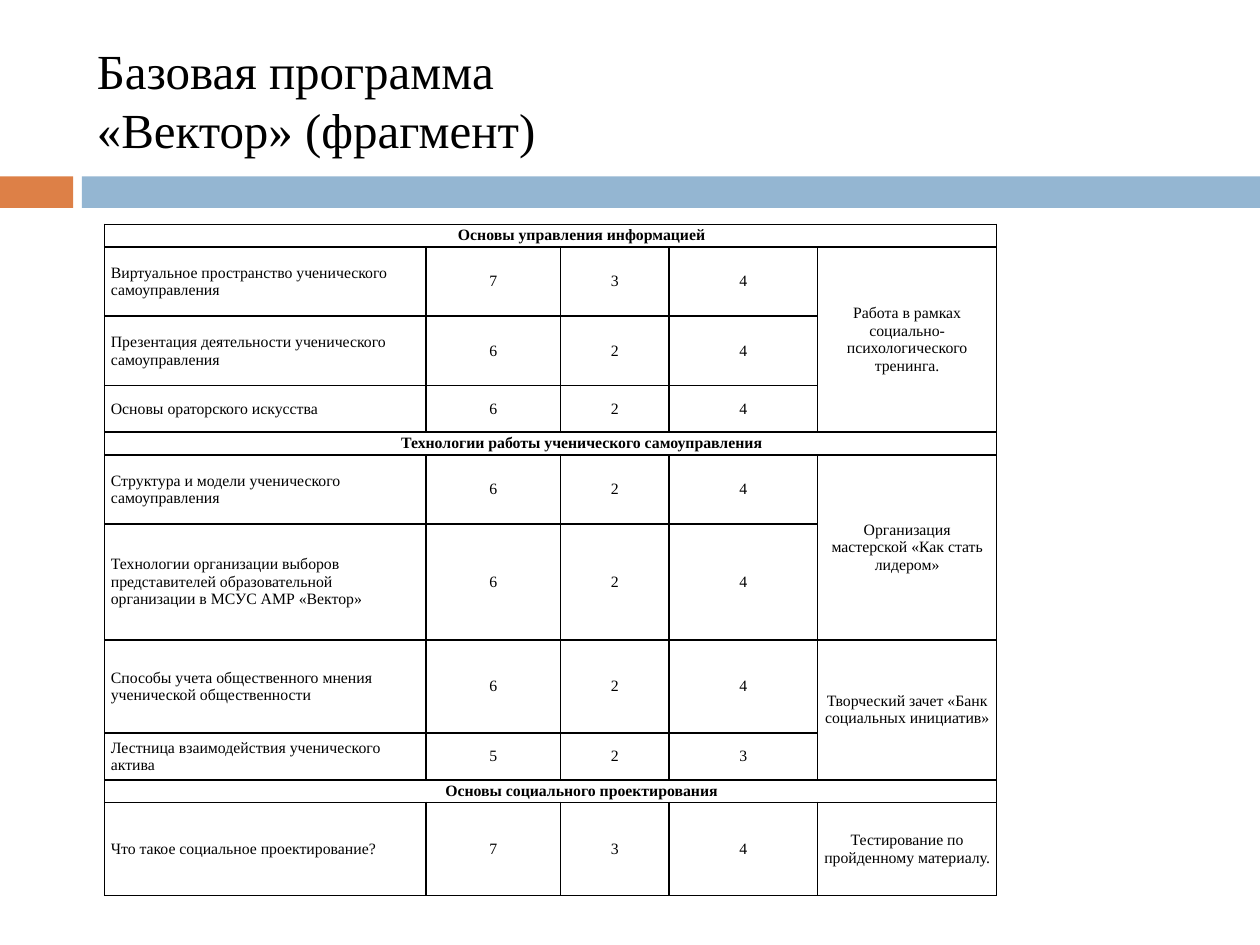
"""Build the slide with a fragment of the «Вектор» base programme."""
import pptx
import pptx.dml.color
import pptx.enum.shapes
import pptx.enum.text
import pptx.oxml
import pptx.oxml.ns
import pptx.util

Inches = pptx.util.Inches
RGB = pptx.dml.color.RGBColor.from_string
ALIGN = pptx.enum.text.PP_ALIGN
COLORS = {"text": "000000", "orange": "DD8047", "blue": "94B6D2", "cell": "FFFFFF"}


def write(frame, text, size=9, bold=False, align=ALIGN.LEFT, indent=0):
    frame.word_wrap = True
    paragraph = frame.paragraphs[0]
    paragraph.alignment = align
    if indent:
        paragraph._p.get_or_add_pPr().set("indent", str(Inches(indent)))
    for number, line in enumerate(text.split("\n")):
        if number:
            paragraph.add_line_break()
        run = paragraph.add_run()
        run.text = line
        run.font.name = "Times New Roman"
        run.font.size = pptx.util.Pt(size)
        run.font.bold = bold
        run.font.color.rgb = RGB(COLORS["text"])


def format_cell(cell):
    cell.margin_left = cell.margin_right = Inches(0.05)
    cell.margin_top = cell.margin_bottom = 0
    cell.vertical_anchor = pptx.enum.text.MSO_ANCHOR.MIDDLE
    properties = cell._tc.get_or_add_tcPr()
    for side in ("lnL", "lnR", "lnT", "lnB"):
        properties.append(pptx.oxml.parse_xml(
            f'<a:{side} {pptx.oxml.ns.nsdecls("a")} w="{pptx.util.Pt(1)}"><a:solidFill>'
            f'<a:srgbClr val="{COLORS["text"]}"/></a:solidFill></a:{side}>'))
    cell.fill.solid()
    cell.fill.fore_color.rgb = RGB(COLORS["cell"])


deck = pptx.Presentation()
deck.slide_width, deck.slide_height = Inches(10), Inches(7.5)
slide = deck.slides.add_slide(deck.slide_layouts[6])

for left, width, color in ((0, 0.58, "orange"), (0.65, 9.35, "blue")):
    band = slide.shapes.add_shape(pptx.enum.shapes.MSO_SHAPE.RECTANGLE,
                                  Inches(left), Inches(1.4), Inches(width), Inches(0.25))
    band.shadow.inherit = False
    band.fill.solid()
    band.fill.fore_color.rgb = RGB(COLORS[color])
    band.line.fill.background()

title = slide.shapes.add_textbox(Inches(0.67), Inches(0.25), Inches(8.92), Inches(1.08))
title.text_frame.vertical_anchor = pptx.enum.text.MSO_ANCHOR.MIDDLE
write(title.text_frame, "Базовая программа\n«Вектор» (фрагмент)", size=28)

column_widths = (2.55, 1.07, 0.86, 1.18, 1.42)
programme = [
    (0.18, "Основы управления информацией"),
    (0.55, "Виртуальное пространство ученического самоуправления", "7", "3", "4",
     "Работа в рамках социально-психологического тренинга."),
    (0.55, "Презентация деятельности ученического самоуправления", "6", "2", "4"),
    (0.37, "Основы ораторского искусства", "6", "2", "4"),
    (0.18, "Технологии работы ученического самоуправления"),
    (0.55, "Структура и модели ученического самоуправления", "6", "2", "4",
     "Организация мастерской «Как стать лидером»"),
    (0.92, "Технологии организации выборов представителей образовательной "
     "организации в МСУС АМР «Вектор»", "6", "2", "4"),
    (0.74, "Способы учета общественного мнения ученической общественности", "6", "2", "4",
     "Творческий зачет «Банк социальных инициатив»"),
    (0.37, "Лестница взаимодействия ученического актива", "5", "2", "3"),
    (0.18, "Основы социального проектирования"),
    (0.74, "Что такое социальное проектирование?", "7", "3", "4",
     "Тестирование по пройденному материалу."),
]
last_column = len(column_widths) - 1
table_frame = slide.shapes.add_table(len(programme), len(column_widths), Inches(0.83),
                                     Inches(1.78), Inches(sum(column_widths)),
                                     Inches(sum(row[0] for row in programme)))
table = table_frame.table
table.first_row = table.horz_banding = False
for column, width in zip(table.columns, column_widths):
    column.width = Inches(width)

for row, (height, *texts) in enumerate(programme):
    table.rows[row].height = Inches(height)
    is_section = len(texts) == 1
    texts += [""] * (len(column_widths) - len(texts))
    for column, text in enumerate(texts):
        cell = table.cell(row, column)
        format_cell(cell)
        write(cell.text_frame, text, bold=is_section,
              align=ALIGN.CENTER if is_section or column else ALIGN.LEFT,
              indent=0.49 if is_section else 0)
    if is_section:
        table.cell(row, 0).merge(table.cell(row, last_column))

for first, last in ((1, 3), (5, 6), (7, 8)):
    table.cell(first, last_column).merge(table.cell(last, last_column))

deck.save("out.pptx")
